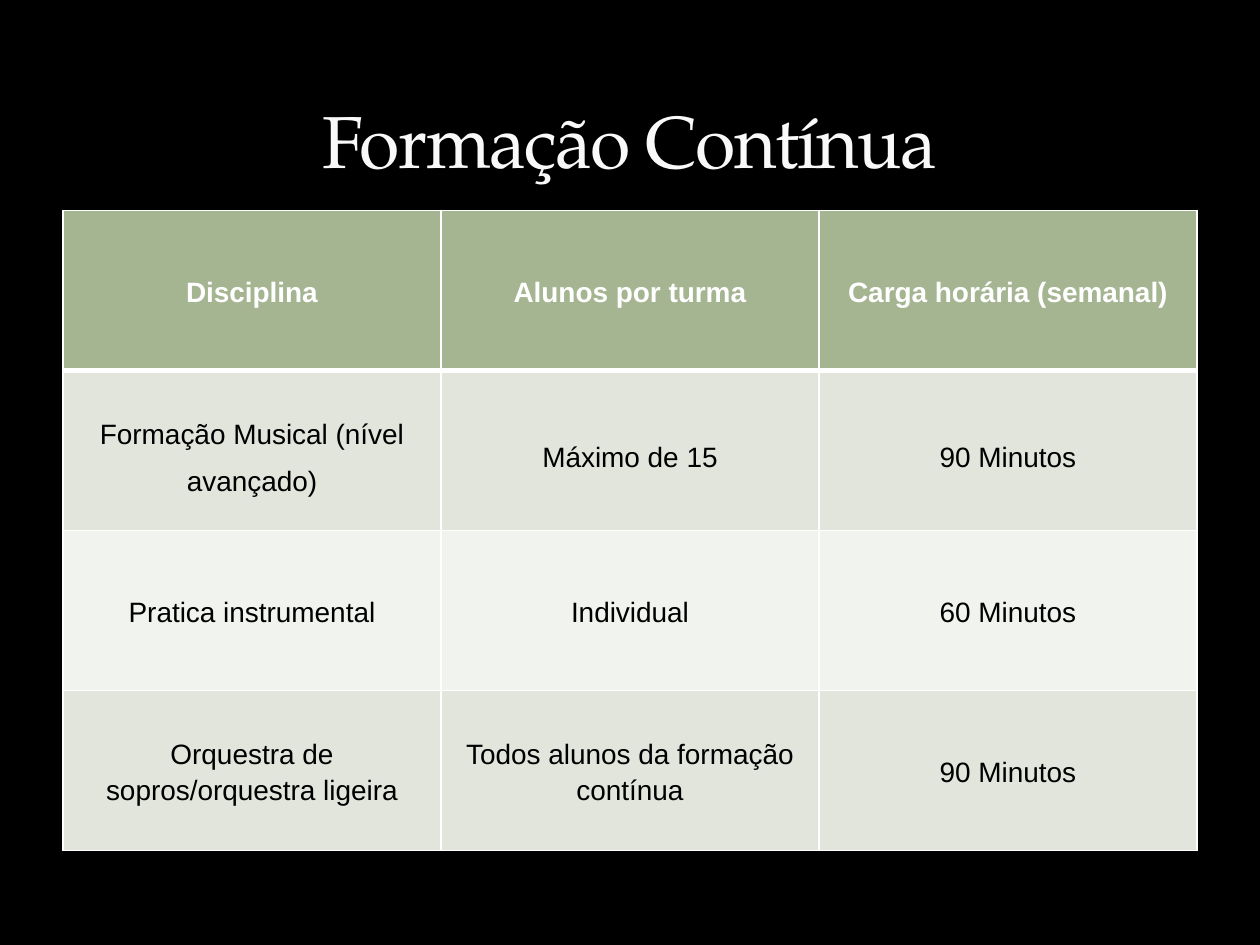
from lxml import etree
from pptx import Presentation
from pptx.dml.color import RGBColor
from pptx.enum.text import MSO_ANCHOR, PP_ALIGN
from pptx.oxml.ns import qn
from pptx.util import Inches, Pt

CENTER = PP_ALIGN.CENTER
MIDDLE = MSO_ANCHOR.MIDDLE
BOTTOM = MSO_ANCHOR.BOTTOM

BLACK = RGBColor(0x00, 0x00, 0x00)
WHITE = RGBColor(0xFF, 0xFF, 0xFF)
OFF_WHITE = RGBColor(0xF9, 0xF9, 0xF9)
SAGE = RGBColor(0xA5, 0xB5, 0x92)
BAND_DARK = RGBColor(0xE1, 0xE5, 0xDC)
BAND_LIGHT = RGBColor(0xF0, 0xF3, 0xEE)

ROWS = [
    ("Disciplina", "Alunos por turma", "Carga horária (semanal)"),
    ("Formação Musical (nível avançado)", "Máximo de 15", "90 Minutos"),
    ("Pratica instrumental", "Individual", "60 Minutos"),
    ("Orquestra de sopros/orquestra ligeira", "Todos alunos da formação contínua", "90 Minutos"),
]
ROW_FILLS = [SAGE, BAND_DARK, BAND_LIGHT, BAND_DARK]
LINE_SPACINGS = [1.15, 1.5, 1.15, 1.15]


class SlideBuilder:
    """Holds the fonts and the current slide, and adds styled elements to it."""

    title_font = "TeX Gyre Pagella"
    body_font = "Arial"

    def __init__(self, slide, background):
        self.slide = slide
        fill = slide.background.fill
        fill.solid()
        fill.fore_color.rgb = background

    def span(self, para, text, font, size, color, bold=False):
        span = para.add_run()
        span.text = text
        span.font.name = font
        span.font.size = Pt(size)
        span.font.color.rgb = color
        span.font.bold = bold
        return span

    def title(self, text, left, top, width, height):
        box = self.slide.shapes.add_textbox(Inches(left), Inches(top), Inches(width), Inches(height))
        frame = box.text_frame
        frame.word_wrap = True
        frame.vertical_anchor = BOTTOM
        para = frame.paragraphs[0]
        para.alignment = CENTER
        span = self.span(para, text, self.title_font, 42, OFF_WHITE)
        span.font._element.set("spc", "-100")

    def border(self, cell, side, points):
        properties = cell._tc.get_or_add_tcPr()
        line = etree.SubElement(properties, qn(f"a:ln{side}"), w=str(Pt(points)))
        fill = etree.SubElement(line, qn("a:solidFill"))
        etree.SubElement(fill, qn("a:srgbClr"), val=str(WHITE))

    def cell(self, cell, text, fill, color, bold, line_spacing, space_after, borders):
        for side, points in borders.items():
            self.border(cell, side, points)
        cell.fill.solid()
        cell.fill.fore_color.rgb = fill
        cell.vertical_anchor = MIDDLE
        cell.margin_left = cell.margin_right = Inches(0.07)
        cell.margin_top = cell.margin_bottom = 0
        para = cell.text_frame.paragraphs[0]
        para.alignment = CENTER
        para.line_spacing = line_spacing
        para.space_after = Pt(space_after)
        self.span(para, text, self.body_font, 16, color, bold)

    def table(self, rows, left, top, width, height):
        frame = self.slide.shapes.add_table(
            len(rows), len(rows[0]), Inches(left), Inches(top), Inches(width), Inches(height)
        )
        table = frame.table
        table.horz_banding = False
        for r, texts in enumerate(rows):
            header = r == 0
            borders = {"L": 1, "R": 1, "T": 3 if r == 1 else 1, "B": 3 if header else 1}
            for c, text in enumerate(texts):
                self.cell(
                    table.cell(r, c),
                    text,
                    fill=ROW_FILLS[r],
                    color=WHITE if header else BLACK,
                    bold=header,
                    line_spacing=LINE_SPACINGS[r],
                    space_after=10 if c > 0 and r != 1 else 0,
                    borders=borders,
                )


def main():
    deck = Presentation()
    deck.slide_width = Inches(10)
    deck.slide_height = Inches(7.5)
    page = SlideBuilder(deck.slides.add_slide(deck.slide_layouts[6]), BLACK)
    page.table(ROWS, 0.5, 1.67, 9, 5.08)
    page.title("Formação Contínua", 0.5, 0.17, 9, 1.33)
    deck.save("out.pptx")


if __name__ == "__main__":
    main()
